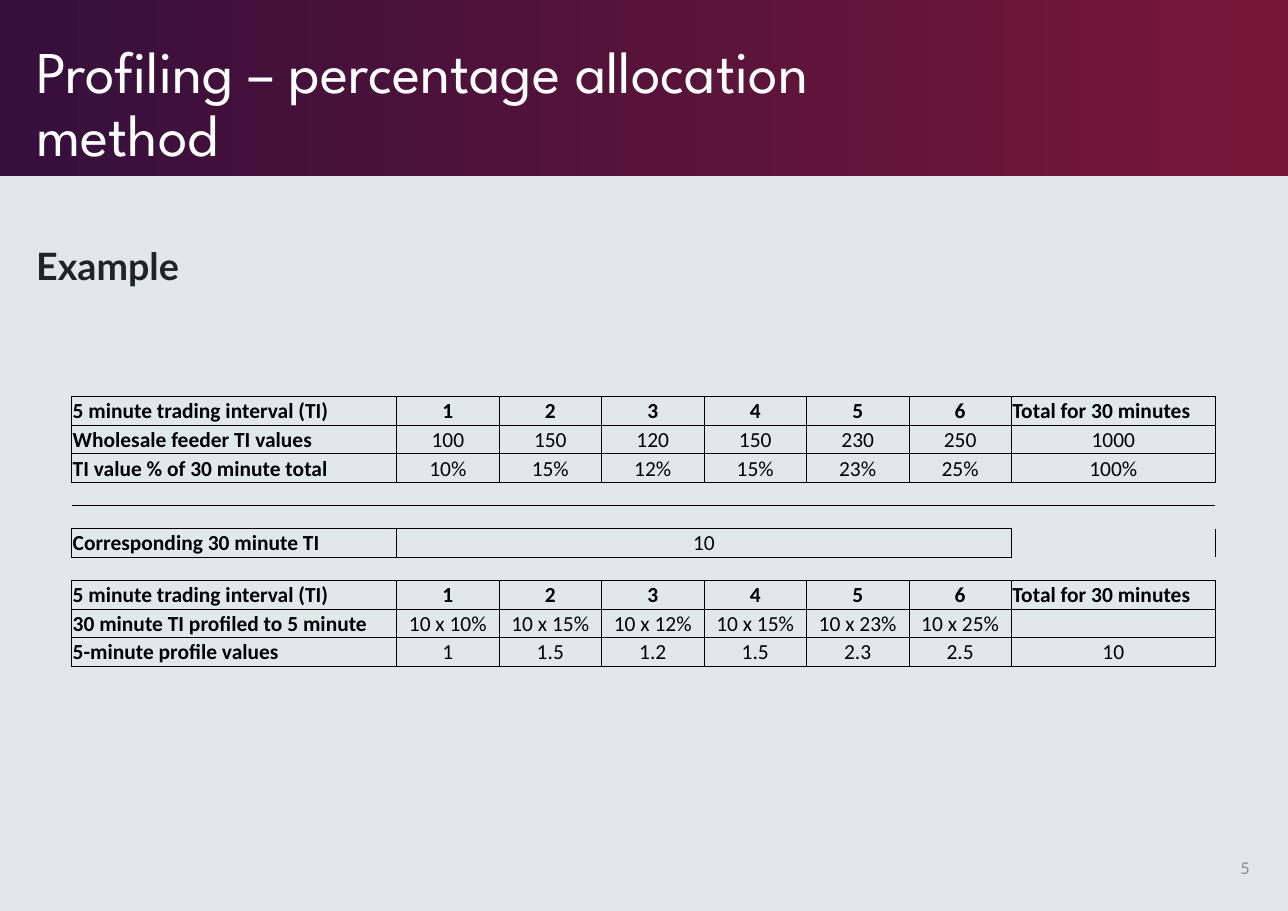
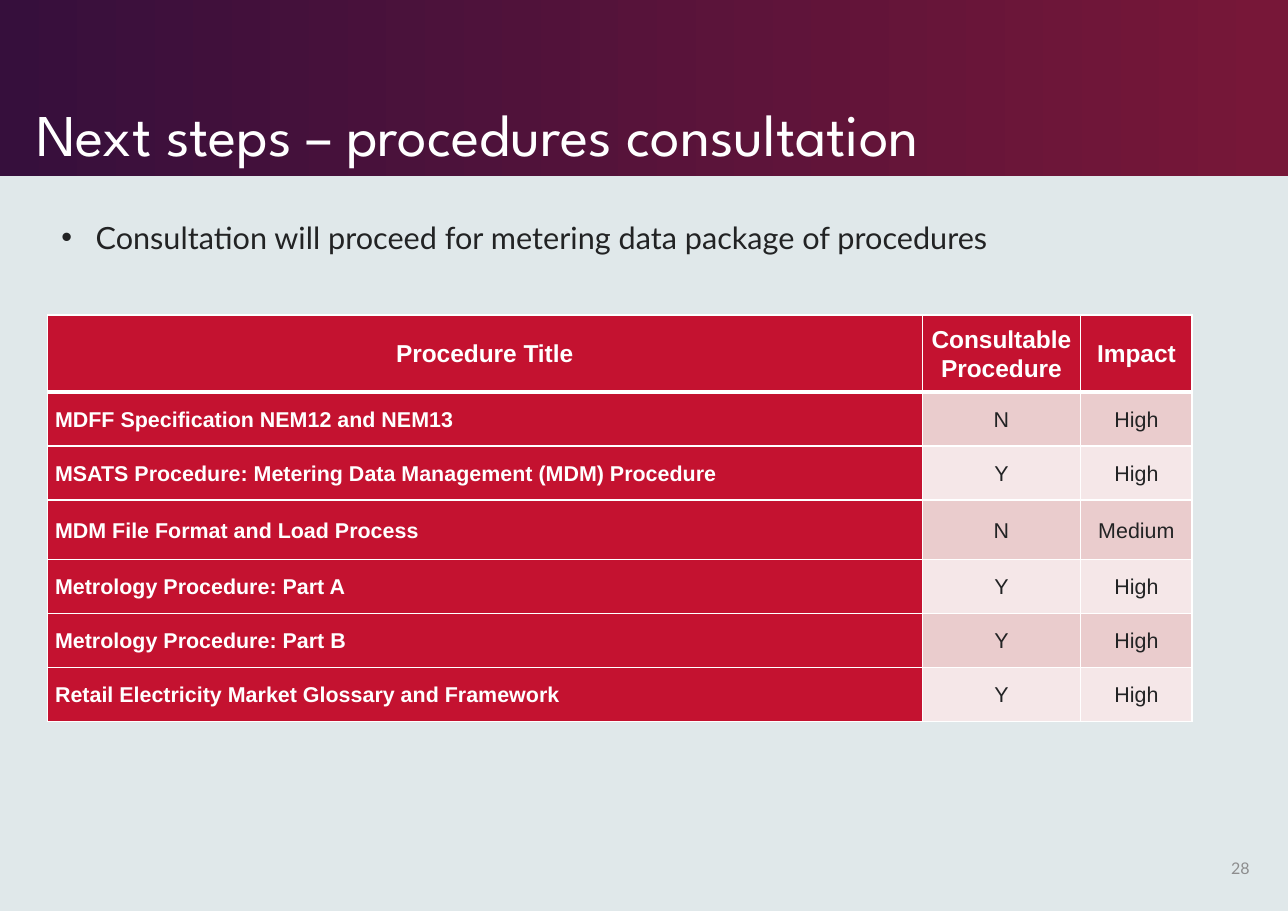
from lxml import etree
from pptx import Presentation
from pptx.dml.color import RGBColor
from pptx.enum import shapes, text
from pptx.oxml.ns import qn
from pptx.util import Inches, Pt

# Shared look
PAGE = RGBColor(0xE0, 0xE8, 0xEA)
PLUM = RGBColor(0x36, 0x0F, 0x3C)
WINE = RGBColor(0x77, 0x17, 0x38)
RED = RGBColor(0xC4, 0x12, 0x30)
ROSE = RGBColor(0xEA, 0xCC, 0xCD)
BLUSH = RGBColor(0xF5, 0xE7, 0xE8)
INK = RGBColor(0x22, 0x23, 0x24)
GREY = RGBColor(0x8D, 0x8D, 0x8E)
BLACK = RGBColor(0, 0, 0)
WHITE = RGBColor(255, 255, 255)
WIDTH, HEIGHT = 11.69, 8.27
BAND_HEIGHT = 1.6
LEFT, CENTER, RIGHT = text.PP_ALIGN.LEFT, text.PP_ALIGN.CENTER, text.PP_ALIGN.RIGHT
TOP, MIDDLE, BOTTOM = (text.MSO_ANCHOR.TOP, text.MSO_ANCHOR.MIDDLE,
                       text.MSO_ANCHOR.BOTTOM)
PLAIN_TABLE = "{2D5ABB26-0587-4C30-8999-92F81FD0307C}"

TITLE = dict(name="League Spartan", size=Pt(38.6), color=WHITE)
HEADING = dict(name="Lato", size=Pt(24.6), color=INK, bold=True)
BULLET = dict(name="Lato", size=Pt(20), color=INK)
NUMBER = dict(name="Lato", size=Pt(10.5), color=GREY)

# Profiling content: None is an unframed cell, "" a framed empty one
INTERVALS = ["5 minute trading interval (TI)", "1", "2", "3", "4", "5", "6",
             "Total for 30 minutes"]
SPACER = [None] * len(INTERVALS)
PROFILE_ROWS = [
    INTERVALS,
    ["Wholesale feeder TI values", "100", "150", "120", "150", "230", "250", "1000"],
    ["TI value % of 30 minute total", "10%", "15%", "12%", "15%", "23%", "25%", "100%"],
    SPACER,
    SPACER,
    ["Corresponding 30 minute TI", "10", "", "", "", "", "", None],
    SPACER,
    INTERVALS,
    ["30 minute TI profiled to 5 minute", "10 x 10%", "10 x 15%", "10 x 12%",
     "10 x 15%", "10 x 23%", "10 x 25%", ""],
    ["5-minute profile values", "1", "1.5", "1.2", "1.5", "2.3", "2.5", "10"],
]
PROFILE_WIDTHS = [2.95] + [0.93] * 6 + [1.85]
PROFILE_HEIGHTS = [0.21 if row is SPACER else 0.26 for row in PROFILE_ROWS]
TOTAL_ROW, TOTAL_SPAN = 5, (1, 6)

# Consultation content
PROCEDURE_ROWS = [
    ["Procedure Title", "Consultable Procedure", "Impact"],
    ["MDFF Specification NEM12 and NEM13", "N", "High"],
    ["MSATS Procedure: Metering Data Management (MDM) Procedure", "Y", "High"],
    ["MDM File Format and Load Process", "N", "Medium"],
    ["Metrology Procedure: Part A", "Y", "High"],
    ["Metrology Procedure: Part B", "Y", "High"],
    ["Retail Electricity Market Glossary and Framework", "Y", "High"],
]
PROCEDURE_WIDTHS = [7.94, 1.44, 1.01]
PROCEDURE_HEIGHTS = [0.7, 0.49, 0.49, 0.54, 0.49, 0.49, 0.49]


def write(paragraph, words, style, align=LEFT, spacing=None):
    paragraph.alignment = align
    if spacing:
        paragraph.line_spacing = spacing
    run = paragraph.add_run()
    run.text = words
    for key, value in style.items():
        if key == "color":
            run.font.color.rgb = value
        else:
            setattr(run.font, key, value)


def add_text(slide, at, words, style, anchor=TOP, align=LEFT, spacing=None):
    frame = slide.shapes.add_textbox(*map(Inches, at)).text_frame
    frame.word_wrap = True
    frame.vertical_anchor = anchor
    write(frame.paragraphs[0], words, style, align, spacing)
    return frame.paragraphs[0]


def add_bullet(paragraph, indent):
    props = paragraph._p.get_or_add_pPr()
    props.set("marL", str(Inches(indent)))
    props.set("indent", str(-Inches(indent)))
    etree.SubElement(props, qn("a:buFont"), typeface="Arial")
    etree.SubElement(props, qn("a:buChar"), char="•")


def add_page(prs, title, title_width, number):
    slide = prs.slides.add_slide(prs.slide_layouts[6])
    band = slide.shapes.add_shape(shapes.MSO_SHAPE.RECTANGLE, 0, 0,
                                  Inches(WIDTH), Inches(BAND_HEIGHT))
    band.shadow.inherit = False
    band.line.fill.background()
    band.fill.gradient()
    band.fill.gradient_angle = 0
    for stop, color, position in zip(band.fill.gradient_stops, (PLUM, WINE), (0, 0.99)):
        stop.color.rgb = color
        stop.position = position
    add_text(slide, (0.23, 0.16, title_width, 1.43), title, TITLE, BOTTOM, spacing=0.9)
    add_text(slide, (10.89, 7.66, 0.55, 0.44), number, NUMBER, MIDDLE, RIGHT)
    return slide


def add_border(cell, side, color, points):
    line = etree.SubElement(cell._tc.get_or_add_tcPr(), qn("a:ln" + side),
                            w=str(Pt(points)))
    fill = etree.SubElement(line, qn("a:solidFill"))
    etree.SubElement(fill, qn("a:srgbClr"), val=str(color))


def add_grid(slide, left, top, widths, heights, rows, margins, border, look):
    """border(row, edge) gives colour and points; look(row, col) gives
    font style, alignment, line spacing and fill."""
    table = slide.shapes.add_table(
        len(rows), len(widths), Inches(left), Inches(top),
        Inches(sum(widths)), Inches(sum(heights))).table
    table.first_row = table.horz_banding = False
    table._tbl.tblPr.find(qn("a:tableStyleId")).text = PLAIN_TABLE
    for column, width in zip(table.columns, widths):
        column.width = Inches(width)
    for line, height in zip(table.rows, heights):
        line.height = Inches(height)

    def framed(r, c):
        return (0 <= r < len(rows) and 0 <= c < len(widths)
                and rows[r][c] is not None)

    for r, row in enumerate(rows):
        for c, words in enumerate(row):
            cell = table.cell(r, c)
            cell.vertical_anchor = MIDDLE
            for side, margin in zip(("left", "top", "right", "bottom"), margins):
                setattr(cell, "margin_" + side, Inches(margin))
            # An edge is ruled when either cell beside it is framed
            for side, dr, dc in (("L", 0, -1), ("R", 0, 1), ("T", -1, 0), ("B", 1, 0)):
                if framed(r, c) or framed(r + dr, c + dc):
                    add_border(cell, side, *border(r, side))
            style, align, spacing, fill = look(r, c)
            if fill is None:
                cell.fill.background()
            else:
                cell.fill.solid()
                cell.fill.fore_color.rgb = fill
            paragraph = cell.text_frame.paragraphs[0]
            if words:
                write(paragraph, words, style, align, spacing)
            else:
                # Small type keeps empty rows at their set height
                paragraph._p.get_or_add_endParaRPr().set("sz", "1000")
    return table


def profile_border(row, side):
    return BLACK, 0.5


def profile_look(row, col):
    header = PROFILE_ROWS[row] is INTERVALS
    label = col == 0 or (header and col == len(INTERVALS) - 1)
    style = dict(name="Calibri", size=Pt(14), color=BLACK, bold=header or col == 0)
    return style, LEFT if label else CENTER, None, None


def procedure_border(row, side):
    return WHITE, 3 if (row, side) in ((0, "B"), (1, "T")) else 1


def procedure_look(row, col):
    strong = row == 0 or col == 0
    style = dict(name="Arial", size=Pt(14 if row else 16),
                 color=WHITE if strong else INK, bold=strong)
    fill = RED if strong else ROSE if row % 2 else BLUSH
    return style, LEFT if row and col == 0 else CENTER, 1.07, fill


def main():
    prs = Presentation()
    prs.slide_width, prs.slide_height = Inches(WIDTH), Inches(HEIGHT)
    background = prs.slide_master.background.fill
    background.solid()
    background.fore_color.rgb = PAGE

    # Profiling example
    profiling = add_page(prs, "Profiling – percentage allocation method", 8.63, "5")
    add_text(profiling, (0.23, 2.2, 11.22, 0.5), "Example", HEADING, spacing=0.9)
    profile = add_grid(profiling, 0.65, 3.6, PROFILE_WIDTHS, PROFILE_HEIGHTS,
                       PROFILE_ROWS, (0.01, 0.01, 0.01, 0), profile_border, profile_look)
    first, last = TOTAL_SPAN
    profile.cell(TOTAL_ROW, first).merge(profile.cell(TOTAL_ROW, last))

    # Procedures consultation
    steps = add_page(prs, "Next steps – procedures consultation", 10.94, "28")
    add_bullet(add_text(
        steps, (0.46, 1.94, 9.4, 0.44),
        "Consultation will proceed for metering data package of procedures", BULLET), 0.31)
    add_grid(steps, 0.43, 2.86, PROCEDURE_WIDTHS, PROCEDURE_HEIGHTS, PROCEDURE_ROWS,
             (0.07, 0, 0.07, 0), procedure_border, procedure_look)

    prs.save("out.pptx")


if __name__ == "__main__":
    main()
